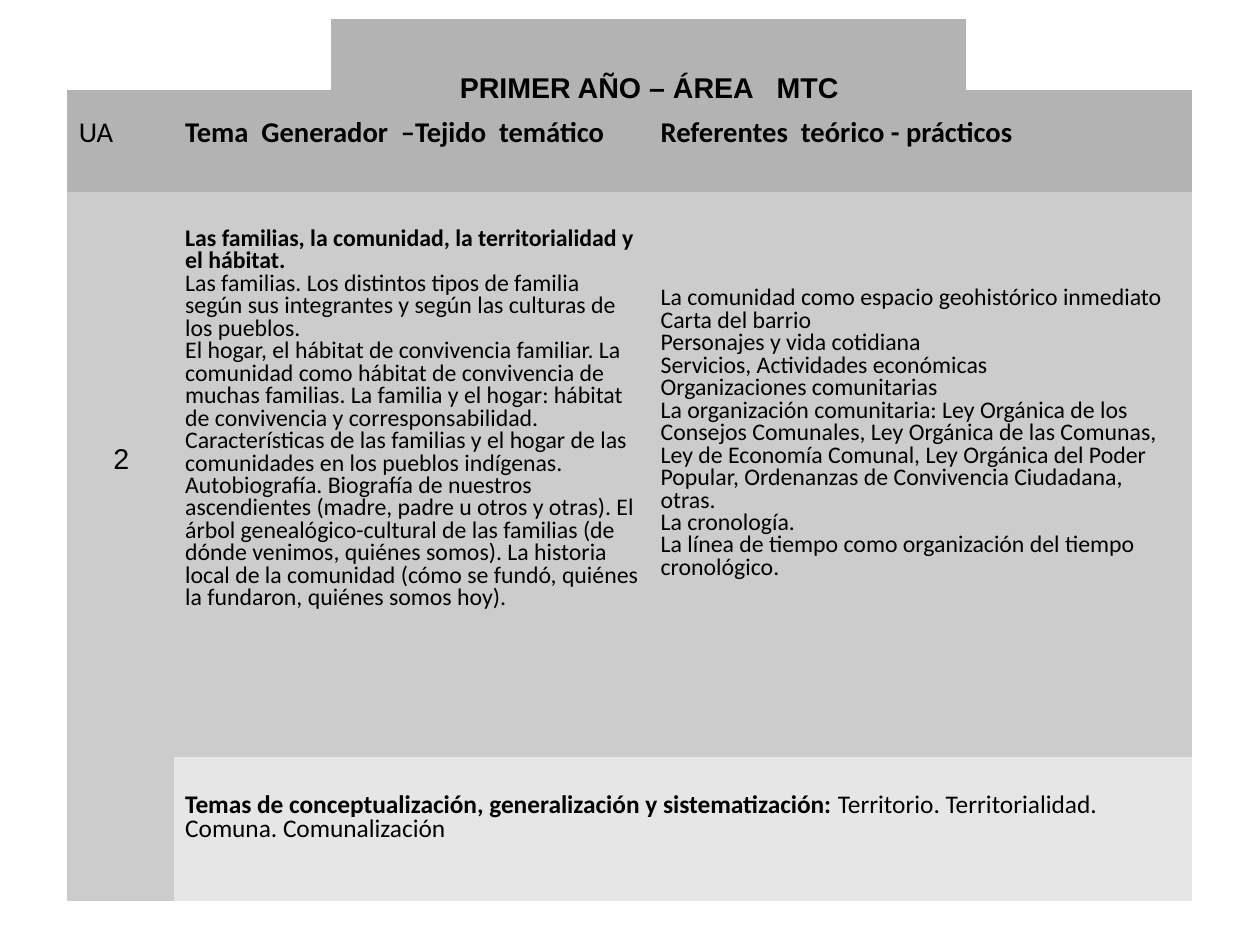
import lxml.etree
import pptx
import pptx.dml.color
import pptx.enum.text
import pptx.oxml
import pptx.oxml.ns
import pptx.util

COLS = [0.93, 4.16, 4.75]
ROWS = [0.89, 4.94, 1.26]
DARK, MID, LIGHT = "B3B3B3", "CCCCCC", "E6E6E6"
NO_STYLE = "{2D5ABB26-0587-4C30-8999-92F81FD0307C}"
CENTER = pptx.enum.text.PP_ALIGN.CENTER

FAMILY_TOPICS = [
    [("Las familias, la comunidad, la territorialidad y el hábitat.", True)],
    [("Las familias. Los distintos tipos de familia según sus integrantes y según "
      "las culturas de los pueblos.", False)],
    [("El hogar, el hábitat de convivencia familiar. La comunidad como hábitat de "
      "convivencia de muchas familias. La familia y el hogar: hábitat de convivencia "
      "y corresponsabilidad. Características de las familias y el hogar de las "
      "comunidades en los pueblos indígenas.", False)],
    [("Autobiografía. Biografía de nuestros ascendientes (madre, padre u otros y "
      "otras). El árbol genealógico-cultural de las familias (de dónde venimos, "
      "quiénes somos). La historia local de la comunidad (cómo se fundó, quiénes la "
      "fundaron, quiénes somos hoy).", False)],
]
REFERENCES = [[(text, False)] for text in (
    "La comunidad como espacio geohistórico inmediato",
    "Carta del barrio",
    "Personajes y vida cotidiana",
    "Servicios, Actividades económicas",
    "Organizaciones comunitarias",
    "La organización comunitaria: Ley Orgánica de los Consejos Comunales, Ley Orgánica "
    "de las Comunas, Ley de Economía Comunal, Ley Orgánica del Poder Popular, "
    "Ordenanzas de Convivencia Ciudadana, otras.",
    "La cronología.",
    "La línea de tiempo como organización del tiempo cronológico.",
)]
CONCEPTS = [[
    ("Temas de conceptualización, generalización y sistematización: ", True),
    ("Territorio. Territorialidad. Comuna. Comunalización", False),
]]
HEADERS = [
    ("UA", False),
    ("Tema  Generador  –Tejido  temático", True),
    ("Referentes  teórico - prácticos", True),
]


def color(value):
    return pptx.dml.color.RGBColor.from_string(value)


def add_grid(s, left, top, cols, rows):
    inch = pptx.util.Inches
    frame = s.shapes.add_table(len(rows), len(cols), inch(left), inch(top),
                               inch(sum(cols)), inch(sum(rows)))
    table = frame.table
    table.first_row = table.horz_banding = False
    table._tbl.tblPr.find(pptx.oxml.ns.qn("a:tableStyleId")).text = NO_STYLE
    for column, width in zip(table.columns, cols):
        column.width = inch(width)
    for row, height in zip(table.rows, rows):
        row.height = inch(height)
    return table


def set_borders(cell):
    tcPr = cell._tc.get_or_add_tcPr()
    for i, side in enumerate("LRTB"):
        tcPr.insert(i, pptx.oxml.parse_xml(
            f'<a:ln{side} {pptx.oxml.ns.nsdecls("a")} w="381"><a:solidFill>'
            f'<a:srgbClr val="FFFFFF"/></a:solidFill></a:ln{side}>'))


def fill_cell(cell, paragraphs, fill, size, top, spacing, font="Calibri", align=None):
    cell.fill.solid()
    cell.fill.fore_color.rgb = color(fill)
    set_borders(cell)
    cell.margin_left = pptx.util.Inches(0.1)
    cell.margin_right = pptx.util.Inches(0.09)
    cell.margin_top = pptx.util.Inches(top)
    cell.margin_bottom = pptx.util.Inches(0.05)
    tf = cell.text_frame
    for i, runs in enumerate(paragraphs):
        p = tf.add_paragraph() if i else tf.paragraphs[0]
        p.line_spacing = spacing
        p.alignment = align
        for text, bold in runs:
            r = p.add_run()
            r.text = text
            r.font.name = font
            r.font.size = pptx.util.Pt(size)
            r.font.bold = bold
            r.font.color.rgb = color("000000")


def add_unit_table(s):
    table = add_grid(s, 0.59, 0.79, COLS, ROWS)
    table.cell(1, 0).merge(table.cell(2, 0))
    table.cell(2, 1).merge(table.cell(2, 2))
    for i, header in enumerate(HEADERS):
        fill_cell(table.cell(0, i), [[header]], DARK, 18, 0.25, 0.83)
    fill_cell(table.cell(1, 0), [[("2", False)]], MID, 18, 2.3, 0.58, "Arial", CENTER)
    fill_cell(table.cell(1, 1), FAMILY_TOPICS, MID, 15, 0.32, 0.77)
    fill_cell(table.cell(1, 2), REFERENCES, MID, 15, 0.84, 0.77)
    fill_cell(table.cell(2, 1), CONCEPTS, LIGHT, 16, 0.33, 0.77)


def add_title_table(s):
    table = add_grid(s, 2.9, 0.17, [5.55], [0.79])
    fill_cell(table.cell(0, 0), [[("PRIMER AÑO – ÁREA   MTC", True)]],
              DARK, 18, 0.56, 0.58, "Arial", CENTER)


def main():
    prs = pptx.Presentation()
    prs.slide_width = pptx.util.Cm(28)
    prs.slide_height = pptx.util.Cm(21)
    s = prs.slides.add_slide(prs.slide_layouts[6])
    add_unit_table(s)
    add_title_table(s)
    prs.save("out.pptx")


if __name__ == "__main__":
    main()
